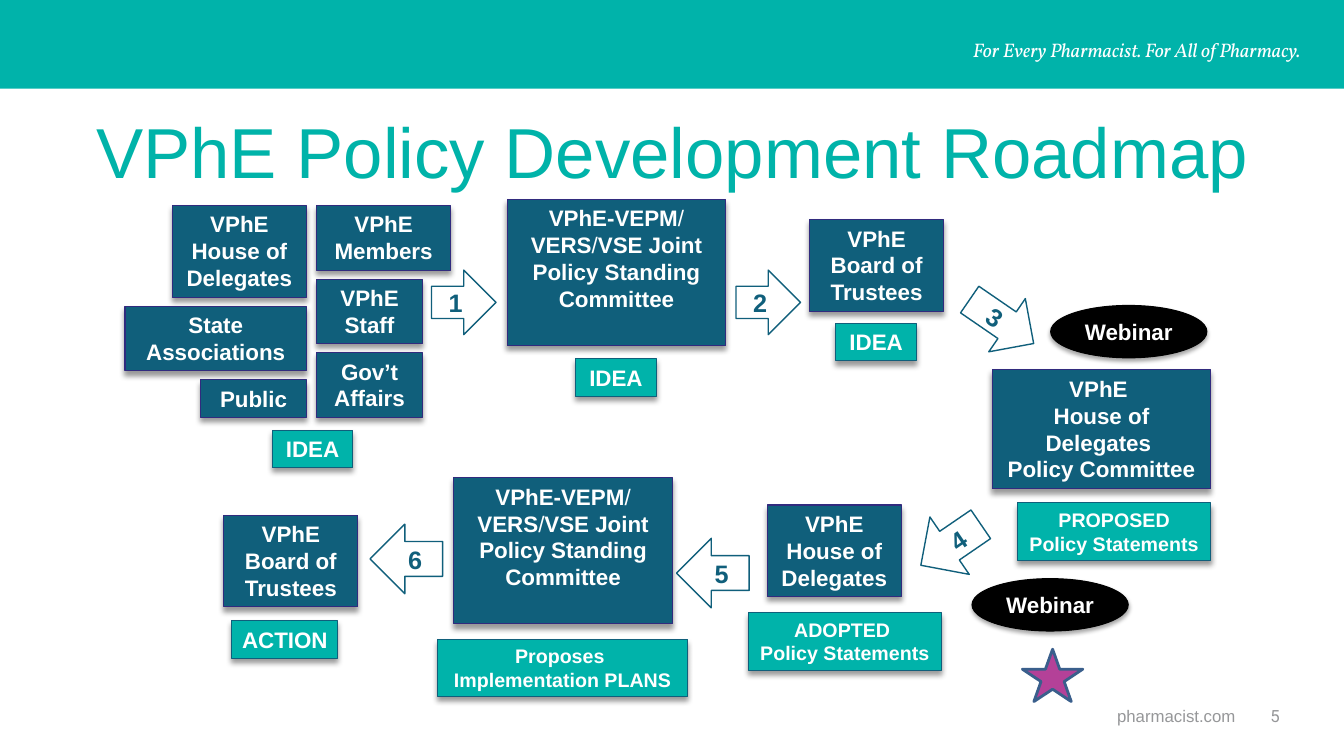
from lxml import etree
from pptx import Presentation
from pptx import util as u
from pptx.dml.color import RGBColor
from pptx.enum import shapes, text
from pptx.oxml.ns import qn

PX = 9144  # 100 px to the inch
TEAL = RGBColor(0x00, 0xB3, 0xAA)
TITLE = RGBColor(0x00, 0xB3, 0xA9)
NAVY = RGBColor(0x10, 0x5F, 0x7B)
INDIGO = RGBColor(0x31, 0x2B, 0x7E)
PURPLE = RGBColor(0xB4, 0x41, 0x98)
STEEL = RGBColor(0x3A, 0x5F, 0x8C)
GREY = RGBColor(0x96, 0x97, 0x99)
BLACK = RGBColor(0, 0, 0)
WHITE = RGBColor(0xFF, 0xFF, 0xFF)

KIND = shapes.MSO_SHAPE
ALIGN = text.PP_ALIGN
TOP = text.MSO_ANCHOR.TOP
MIDDLE = text.MSO_ANCHOR.MIDDLE

GROUP = (133, 91)      # box for a group of people
PANEL = (217, 145)     # box for a standing committee
IDEA = (80, 37)
POLICY = (192, 57)
OVAL = (155, 52)
LEFT = (72, 69)        # arrow to the left
RIGHT = (64, 64)       # arrow to the right
JOINT = "VPhE-VEPM/VERS/VSE Joint Policy Standing Committee"


def emu(box, x, y, size):
    """Place a size at x, y inside a region's box."""
    return [n * PX for n in (box[0] + x, box[1] + y, *size)]


def style(font, size, color, face="Arial", bold=False):
    font.name, font.size, font.bold = face, u.Pt(size), bold
    font.color.rgb = color


def write(shape, label, size, color, anchor=TOP, bold=True):
    """Fill a shape with centred lines; slashes stay light."""
    frame = shape.text_frame
    frame.word_wrap = " " in label
    frame.vertical_anchor = anchor
    for i, line in enumerate(label.split("\n")):
        para = frame.add_paragraph() if i else frame.paragraphs[0]
        para.alignment = ALIGN.CENTER
        style(para.font, size, color, bold=bold)
        for j, part in enumerate(line.split("/")):
            if j:
                slash = para.add_run()
                slash.text = "/"
                slash.font.bold = False
            para.add_run().text = part


def draw(slide, kind, place, fill, edge, width):
    shape = slide.shapes.add_shape(kind, *place)
    shape.shadow.inherit = False
    shape.fill.solid()
    shape.fill.fore_color.rgb = fill
    shape.line.color.rgb = edge
    shape.line.width = u.Pt(width)
    return shape


def shade(shape, alpha, blur, dist):
    """Cast a soft shadow straight down."""
    effects = shape._element.spPr.find(qn("a:effectLst"))
    outer = etree.SubElement(effects, qn("a:outerShdw"), blurRad=str(u.Pt(blur)),
                             dist=str(u.Pt(dist)), dir="5400000", rotWithShape="0")
    tint = etree.SubElement(outer, qn("a:srgbClr"), val="000000")
    etree.SubElement(tint, qn("a:alpha"), val=str(alpha * 1000))


def group(slide, place, label):
    shape = draw(slide, KIND.RECTANGLE, place, NAVY, INDIGO, 0.75)
    shade(shape, 40, 4, 3)
    write(shape, label, 16, WHITE)


def tag(slide, place, label, size=16):
    shape = draw(slide, KIND.RECTANGLE, place, TEAL, NAVY, 0.75)
    shade(shape, 40, 4, 3)
    write(shape, label, size, WHITE)


def arrow(slide, kind, place, label, turn=0):
    shape = draw(slide, kind, place, WHITE, NAVY, 1)
    shape.rotation = turn
    write(shape, label, 18, NAVY, MIDDLE)


def webinar(slide, place):
    shape = draw(slide, KIND.OVAL, place, BLACK, BLACK, 0.75)
    shade(shape, 35, 3.1, 1.8)
    write(shape, "Webinar", 16, WHITE)


def plain(slide, place, label, size, color, face="Arial", inset=0):
    """Add a one-line text box."""
    frame = slide.shapes.add_textbox(*place).text_frame
    frame.word_wrap = True
    frame.margin_left = frame.margin_right = inset * PX
    frame.margin_top = frame.margin_bottom = inset // 2 * PX
    para = frame.paragraphs[0]
    para.add_run().text = label
    style(para.font, size, color, face)
    return para


def header(slide, box):
    draw(slide, KIND.RECTANGLE, emu(box, 0, 0, box[2:]), TEAL, TEAL, 0.75).line.fill.background()
    motto = plain(slide, emu(box, 842, 33, (458, 34)),
                  "For Every Pharmacist. For All of Pharmacy.", 14, WHITE, "Vollkorn", 10)
    motto.alignment = ALIGN.RIGHT
    motto.font.italic = True


def title(slide, box):
    shape = slide.shapes.add_textbox(*emu(box, 0, 0, box[2:]))
    frame = shape.text_frame
    frame.margin_left = frame.margin_right = frame.margin_top = frame.margin_bottom = 0
    write(shape, "VPhE Policy Development Roadmap", 50.5, TITLE, MIDDLE, False)


def footer(slide, box):
    plain(slide, emu(box, 0, 0, (124, 20)), "pharmacist.com", 12, GREY)
    plain(slide, emu(box, 152, 0, (29, 20)), "5", 12, GREY, "Roboto")


def sources(slide, box):
    for x, y, w, h, label in (
            (47, 0, *GROUP, "VPhE House of Delegates"),
            (0, 100, 180, 64, "State Associations"),
            (75, 173, 105, 37, "Public"),
            (190, 0, 133, 64, "VPhE Members"),
            (190, 73, 105, 64, "VPhE Staff"),
            (190, 146, 105, 64, "Gov’t Affairs")):
        group(slide, emu(box, x, y, (w, h)), label)
    tag(slide, emu(box, 146, 223, IDEA), "IDEA")


def review(slide, box):
    group(slide, emu(box, 75, 0, PANEL), JOINT)
    tag(slide, emu(box, 143, 158, IDEA), "IDEA")
    group(slide, emu(box, 375, 20, GROUP), "VPhE Board of Trustees")
    tag(slide, emu(box, 401, 123, IDEA), "IDEA")
    arrow(slide, KIND.RIGHT_ARROW, emu(box, 0, 70, RIGHT), "1")
    arrow(slide, KIND.RIGHT_ARROW, emu(box, 302, 70, RIGHT), "2")
    arrow(slide, KIND.RIGHT_ARROW, emu(box, 527, 89, (77, 64)), "3", 34.5)


def proposal(slide, box):
    webinar(slide, emu(box, 58, 0, OVAL))
    group(slide, emu(box, 0, 64, (217, 118)), "VPhE \nHouse of Delegates \nPolicy Committee")
    tag(slide, emu(box, 25, 196, POLICY), "PROPOSED Policy Statements", 14)


def adoption(slide, box):
    group(slide, emu(box, 539, 27, GROUP), "VPhE House of Delegates")
    tag(slide, emu(box, 520, 134, POLICY), "ADOPTED \nPolicy Statements", 14)
    group(slide, emu(box, 228, 0, PANEL), JOINT)
    tag(slide, emu(box, 212, 160, (248, 57)), "Proposes \nImplementation PLANS", 14)
    group(slide, emu(box, 0, 37, GROUP), "VPhE Board of Trustees")
    tag(slide, emu(box, 8, 142, (105, 37)), "ACTION")
    arrow(slide, KIND.LEFT_ARROW, emu(box, 685, 32, LEFT), "4", 325.6)
    arrow(slide, KIND.LEFT_ARROW, emu(box, 449, 60, LEFT), "5")
    arrow(slide, KIND.LEFT_ARROW, emu(box, 145, 46, LEFT), "6")
    webinar(slide, emu(box, 742, 100, OVAL))
    draw(slide, KIND.STAR_5_POINT, emu(box, 792, 170, (60, 52)), PURPLE, STEEL, 2)


def main():
    deck = Presentation()
    deck.slide_width, deck.slide_height = 1333 * PX, 750 * PX
    slide = deck.slides.add_slide(deck.slide_layouts[6])
    # Frame of the slide
    header(slide, (0, 0, 1333, 88))
    title(slide, (49, 101, 1236, 97))
    footer(slide, (1108, 700, 181, 20))
    # Roadmap, in the order of its steps
    sources(slide, (124, 204, 323, 260))
    review(slide, (428, 198, 604, 198))
    proposal(slide, (984, 303, 217, 253))
    adoption(slide, (222, 474, 897, 222))
    deck.save("out.pptx")


if __name__ == "__main__":
    main()
